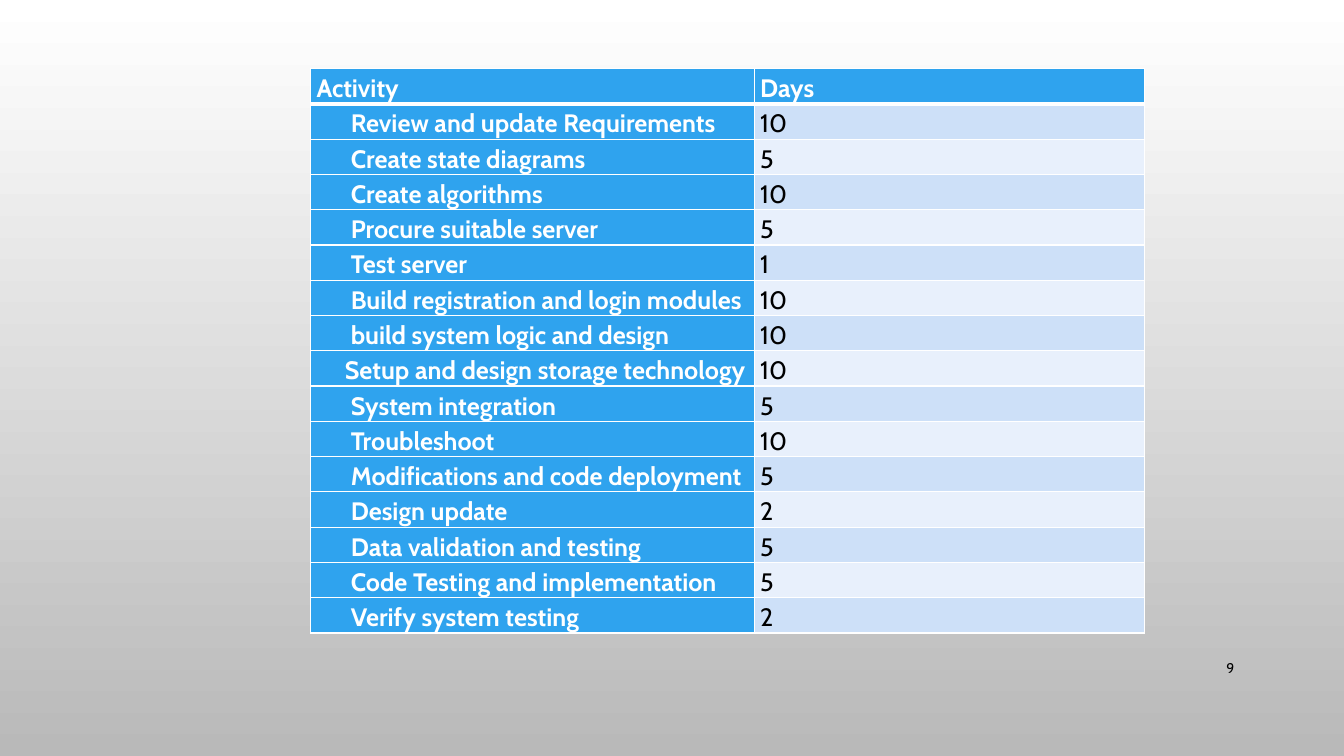
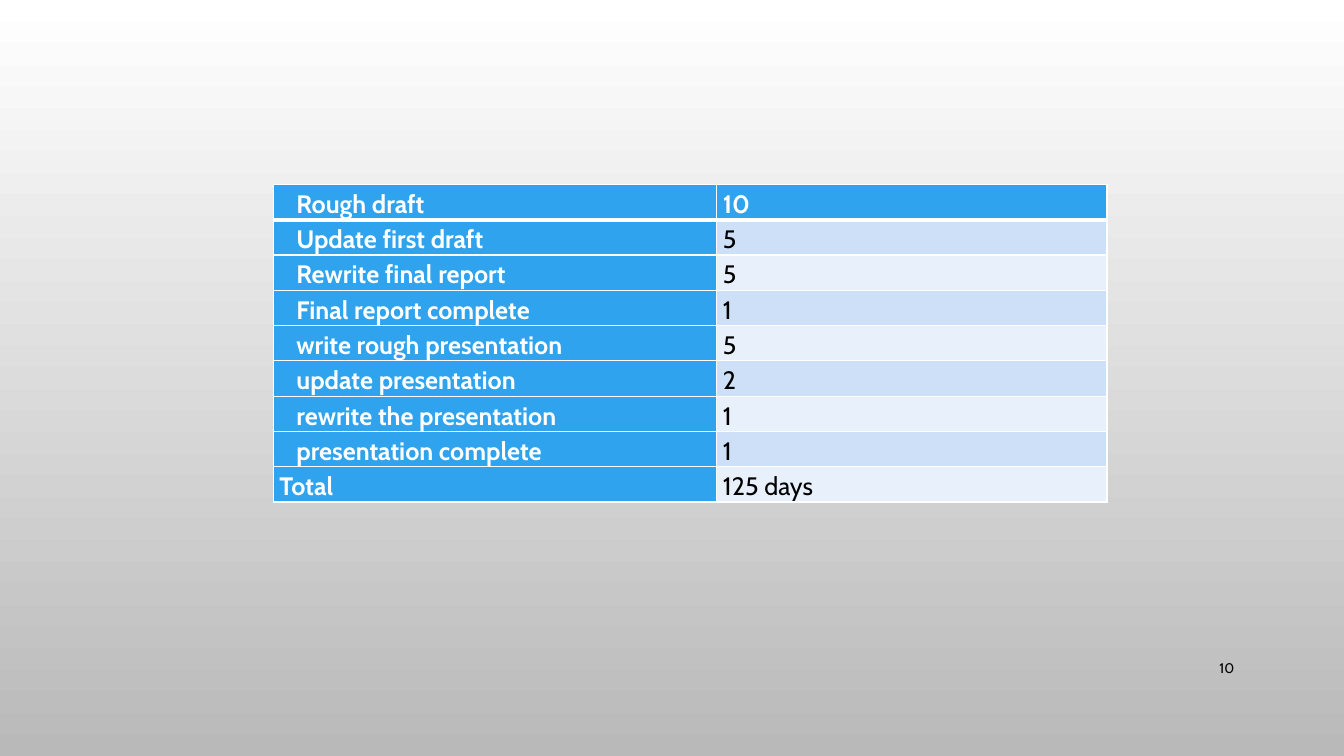
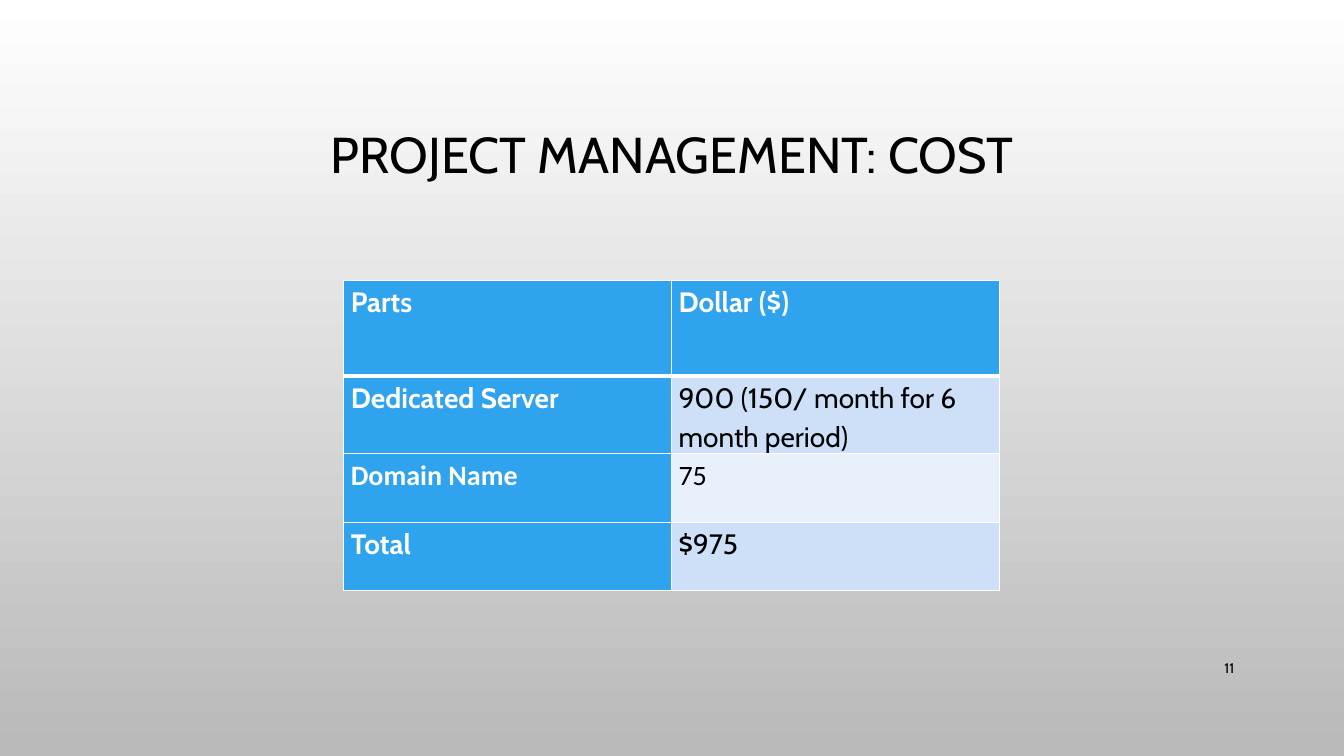
"""Build three project schedule and cost slides with styled tables."""
from dataclasses import dataclass

from lxml import etree
from pptx import Presentation
from pptx.dml.color import RGBColor
from pptx.enum.text import MSO_ANCHOR, PP_ALIGN
from pptx.oxml.ns import qn
from pptx.slide import Slide
from pptx.table import _Cell
from pptx.text.text import _Paragraph
from pptx.util import Inches, Pt

MIDDLE = MSO_ANCHOR.MIDDLE
CENTER = PP_ALIGN.CENTER
RIGHT = PP_ALIGN.RIGHT
TITLE_ONLY, BLANK = 5, 6

COLORS = {
    "text": "000000",
    "white": "FFFFFF",
    "backdrop_end": "B9B9B9",
    "accent": "2FA3EE",
    "band_dark": "CDE0F8",
    "band_light": "E8F0FC",
}
FONT = "Cabin"
ALT_FONT = "Calibri"
RULE, HEADER_RULE = 1, 3
SCHEDULE_ROW = 0.35
SCHEDULE_COLUMNS = (4.4, 3.87)
TASK_INDENT = 0.34
STORAGE_INDENT = 0.28
REPORT_INDENT = 0.17


@dataclass(frozen=True)
class Entry:
    label: str
    value: str
    indent: float = 0
    height: float = SCHEDULE_ROW
    font: str = FONT


@dataclass(frozen=True)
class TableSpec:
    left: float
    top: float
    columns: tuple[float, float]
    entries: list[Entry]
    size: int = 18
    margin: float = 0.06


@dataclass(frozen=True)
class Page:
    number: int
    table: TableSpec
    title: str = ""


ACTIVITIES = [
    Entry("Activity", "Days"),
    Entry("Review and update Requirements", "10", TASK_INDENT),
    Entry("Create state diagrams", "5", TASK_INDENT),
    Entry("Create algorithms", "10", TASK_INDENT),
    Entry("Procure suitable server", "5", TASK_INDENT),
    Entry("Test server", "1", TASK_INDENT),
    Entry("Build registration and login modules", "10", TASK_INDENT),
    Entry("build system logic and design", "10", TASK_INDENT),
    Entry("Setup and design storage technology", "10", STORAGE_INDENT),
    Entry("System integration", "5", TASK_INDENT),
    Entry("Troubleshoot", "10", TASK_INDENT),
    Entry("Modifications and code deployment", "5", TASK_INDENT),
    Entry("Design update", "2", TASK_INDENT),
    Entry("Data validation and testing", "5", TASK_INDENT),
    Entry("Code Testing and implementation", "5", TASK_INDENT),
    Entry("Verify system testing", "2", TASK_INDENT),
]
REPORTING = [
    Entry("Rough draft", "10", REPORT_INDENT),
    Entry("Update first draft", "5", REPORT_INDENT),
    Entry("Rewrite final report", "5", REPORT_INDENT),
    Entry("Final report complete", "1", REPORT_INDENT),
    Entry("write rough presentation", "5", REPORT_INDENT),
    Entry("update presentation", "2", REPORT_INDENT),
    Entry("rewrite the presentation", "1", REPORT_INDENT),
    Entry("presentation complete", "1", REPORT_INDENT),
    Entry("Total", "125 days"),
]
COSTS = [
    Entry("Parts", "Dollar ($)", height=0.95),
    Entry("Dedicated Server", "900 (150/ month for 6 month period)", height=0.77),
    Entry("Domain Name", "75", height=0.68, font=ALT_FONT),
    Entry("Total", "$975", height=0.68),
]
PAGES = [
    Page(9, TableSpec(3.08, 0.68, SCHEDULE_COLUMNS, ACTIVITIES)),
    Page(10, TableSpec(2.71, 1.83, SCHEDULE_COLUMNS, REPORTING)),
    Page(11, TableSpec(3.41, 2.78, (3.25, 3.25), COSTS, 20, 0.07),
         "PROJECT MANAGEMENT: COST"),
]


def rgb(name: str) -> RGBColor:
    return RGBColor.from_string(COLORS[name])


def style_text(paragraph: _Paragraph, size: int, color: str = "text",
               bold: bool = False, font: str = FONT) -> None:
    paragraph.font.name = font
    paragraph.font.size = Pt(size)
    paragraph.font.bold = bold
    paragraph.font.color.rgb = rgb(color)


def add_borders(cell: _Cell, row: int) -> None:
    properties = cell._tc.get_or_add_tcPr()
    widths = {
        "L": RULE,
        "R": RULE,
        "T": HEADER_RULE if row == 1 else RULE,
        "B": HEADER_RULE if row == 0 else RULE,
    }
    for side, width in widths.items():
        line = etree.SubElement(properties, qn(f"a:ln{side}"), w=str(Pt(width)))
        fill = etree.SubElement(line, qn("a:solidFill"))
        etree.SubElement(fill, qn("a:srgbClr"), val=COLORS["white"])


def add_entries(slide: Slide, spec: TableSpec) -> None:
    table = slide.shapes.add_table(
        len(spec.entries), len(spec.columns), Inches(spec.left), Inches(spec.top),
        Inches(sum(spec.columns)),
        Inches(sum(entry.height for entry in spec.entries))).table
    table.horz_banding = False
    table.first_col = True
    for column, width in zip(table.columns, spec.columns):
        column.width = Inches(width)
    for row, entry in enumerate(spec.entries):
        table.rows[row].height = Inches(entry.height)
        for column, text in enumerate((entry.label, entry.value)):
            cell = table.cell(row, column)
            heading = row == 0 or column == 0
            band = "band_dark" if row % 2 else "band_light"
            add_borders(cell, row)
            cell.fill.solid()
            cell.fill.fore_color.rgb = rgb("accent" if heading else band)
            cell.margin_left = Inches(spec.margin + (0 if column else entry.indent))
            cell.margin_right = Inches(spec.margin)
            cell.margin_top = cell.margin_bottom = 0
            cell.text = text
            paragraph = cell.text_frame.paragraphs[0]
            paragraph.line_spacing = 1.15
            style_text(paragraph, spec.size, "white" if heading else "text",
                       heading, entry.font)


def add_title(slide: Slide, text: str) -> None:
    title = slide.shapes.title
    title.left, title.top = Inches(1), Inches(0.68)
    title.width, title.height = Inches(11.33), Inches(1.75)
    title.text_frame.text = text
    title.text_frame.vertical_anchor = MIDDLE
    paragraph = title.text_frame.paragraphs[0]
    paragraph.alignment = CENTER
    paragraph.line_spacing = 0.9
    style_text(paragraph, 36)


def add_page_number(slide: Slide, number: int) -> None:
    frame = slide.shapes.add_textbox(
        Inches(11.5), Inches(6.43), Inches(0.84), Inches(0.4)).text_frame
    frame.word_wrap = True
    frame.vertical_anchor = MIDDLE
    frame.text = str(number)
    frame.paragraphs[0].alignment = RIGHT
    style_text(frame.paragraphs[0], 10)


def main() -> None:
    deck = Presentation()
    deck.slide_width, deck.slide_height = Inches(13.33), Inches(7.5)
    backdrop = deck.slide_master.background.fill
    backdrop.gradient()
    backdrop.gradient_angle = 270
    for stop, color in zip(backdrop.gradient_stops, ("white", "backdrop_end")):
        stop.color.rgb = rgb(color)
    for page in PAGES:
        layout = TITLE_ONLY if page.title else BLANK
        slide = deck.slides.add_slide(deck.slide_layouts[layout])
        if page.title:
            add_title(slide, page.title)
        add_page_number(slide, page.number)
        add_entries(slide, page.table)
    deck.save("out.pptx")


if __name__ == "__main__":
    main()
